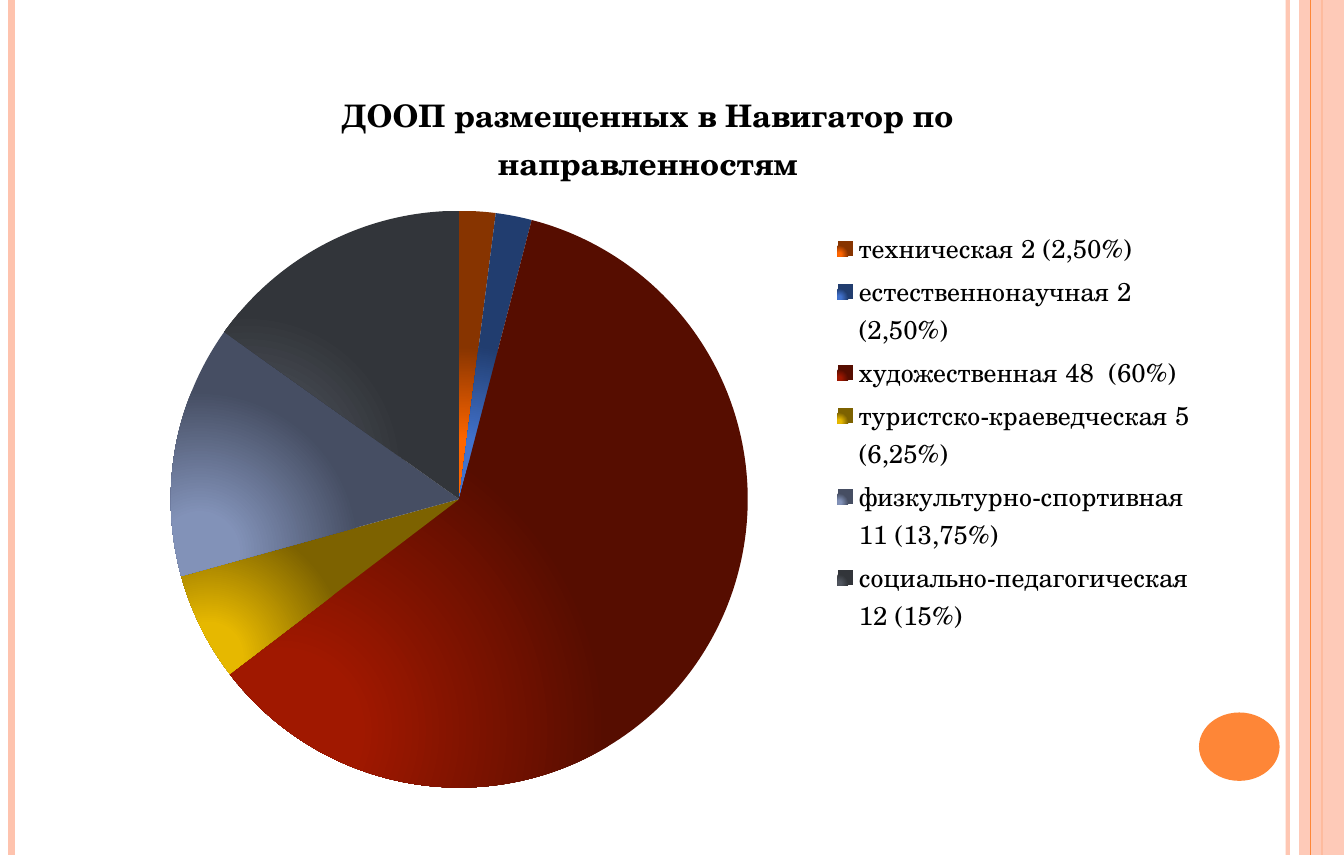
from pptx import Presentation
from pptx.chart.data import CategoryChartData
from pptx.dml.color import RGBColor
from pptx.enum.chart import XL_CHART_TYPE as Chart, XL_LEGEND_POSITION as Legend
from pptx.enum.shapes import MSO_CONNECTOR as Line, MSO_SHAPE as Shape
from pptx.oxml import parse_xml
from pptx.oxml.ns import nsdecls
from pptx.util import Cm, Pt
from lxml import etree

WIDTH, HEIGHT = 33, 21
COLORS = {"peach": "FEC3AE", "orange": "FE8637", "text": "000000"}
TITLE = "ДООП размещенных в Навигатор по направленностям"
PROGRAMS = [
    ("техническая 2 (2,50%)", 2, "FF6600", "873400"),
    ("естественнонаучная 2 (2,50%)", 2, "4272CC", "213D6F"),
    ("художественная 48  (60%)", 60, "A01800", "560D00"),
    ("туристско-краеведческая 5  (6,25%)", 6, "E6B800", "7D6200"),
    ("физкультурно-спортивная 11 (13,75%)", 14, "8292B8", "464E63"),
    ("социально-педагогическая 12 (15%)", 15, "50555E", "32353A"),
]


class SlideBuilder:
    font = "TeX Gyre Schola"

    def __init__(self, prs):
        self.s = prs.slides.add_slide(prs.slide_layouts[6])

    def paint(self, fill, color, alpha=100):
        fill.solid()
        fill.fore_color.rgb = RGBColor.from_string(COLORS[color])
        if alpha < 100:
            rgb = fill._xPr.find(".//{*}srgbClr")
            etree.SubElement(rgb, rgb.tag.replace("srgbClr", "alpha"), val=str(alpha * 1000))

    def vertical(self, x, color, width, alpha=100):
        c = self.s.shapes.add_connector(Line.STRAIGHT, Cm(x), 0, Cm(x), Cm(HEIGHT))
        c.line.width = Pt(width)
        self.paint(c.line.fill, color, alpha)
        c._element.spPr.append(parse_xml(f"<a:effectLst {nsdecls('a')}/>"))

    def shape(self, kind, x, y, w, h, color, alpha=100):
        sp = self.s.shapes.add_shape(kind, Cm(x), Cm(y), Cm(w), Cm(h))
        sp.shadow.inherit = False
        sp.line.fill.background()
        self.paint(sp.fill, color, alpha)

    def style_font(self, font, size, bold=False):
        font.name, font.size, font.bold = self.font, Pt(size), bold
        font.color.rgb = RGBColor.from_string(COLORS["text"])

    def layout(self, parent, percents, inner=False):
        target = '<c:layoutTarget val="inner"/>' if inner else ""
        sizes = "".join(f'<c:{k} val="{v / 100:.3f}"/>' for k, v in zip("xywh", percents))
        node = parse_xml(
            f'<c:layout {nsdecls("c")}><c:manualLayout>{target}<c:xMode val="edge"/>'
            f'<c:yMode val="edge"/>{sizes}</c:manualLayout></c:layout>')
        for old in parent.findall("{*}layout"):
            parent.remove(old)
        parent.insert(1 if parent.find("{*}legendPos") is not None else 0, node)

    def radial(self, point, light, dark):
        point.format.fill.background()
        spPr = point.format.fill._xPr
        stops = "".join(f'<a:gs pos="{pos * 1000}"><a:srgbClr val="{color}"/></a:gs>'
                        for pos, color in ((0, light), (20, light), (85, dark), (100, dark)))
        spPr.replace(spPr.find("{*}noFill"), parse_xml(
            f'<a:gradFill {nsdecls("a")} rotWithShape="1"><a:gsLst>{stops}</a:gsLst>'
            '<a:path path="circle"><a:fillToRect l="10000" t="90000" r="90000" b="10000"/>'
            '</a:path></a:gradFill>'))
        point.format.line.fill.background()

    def pie(self, x, y, w, h, title, rows):
        data = CategoryChartData()
        data.categories = [row[0] for row in rows]
        data.add_series("Series 1", [row[1] for row in rows])
        chart = self.s.shapes.add_chart(Chart.PIE, Cm(x), Cm(y), Cm(w), Cm(h), data).chart
        self.style_font(chart.font, 18)
        chart.has_title = True
        r = chart.chart_title.text_frame.paragraphs[0].add_run()
        r.text = title
        self.style_font(r.font, 21.6, True)
        chart.has_legend = True
        chart.legend.position = Legend.RIGHT
        chart.legend.include_in_layout = False
        self.style_font(chart.legend.font, 18)
        plot = chart.plots[0]
        plot.vary_by_categories = True
        for i, (_, _, light, dark) in enumerate(rows):
            self.radial(plot.series[0].points[i], light, dark)
        self.layout(chart._chartSpace.chart.plotArea, (7.2, 20.2, 52, 77.8), True)
        self.layout(chart.legend._element, (67.2, 22, 33, 56))


def main():
    prs = Presentation()
    prs.slide_width, prs.slide_height = Cm(WIDTH), Cm(HEIGHT)
    b = SlideBuilder(prs)
    b.vertical(31.62, "peach", 3, 93)
    b.vertical(0.28, "peach", 4.5)
    b.vertical(32.46, "orange", 1.5)
    b.shape(Shape.RECTANGLE, 31.9, 0, 1.1, HEIGHT, "peach", 87)
    b.vertical(32.18, "orange", 0.75)
    b.shape(Shape.OVAL, 29.44, 17.5, 1.98, 1.68, "orange")
    b.pie(2.11, 1.5, 27.61, 18.21, TITLE, PROGRAMS)
    prs.save("out.pptx")


if __name__ == "__main__":
    main()
